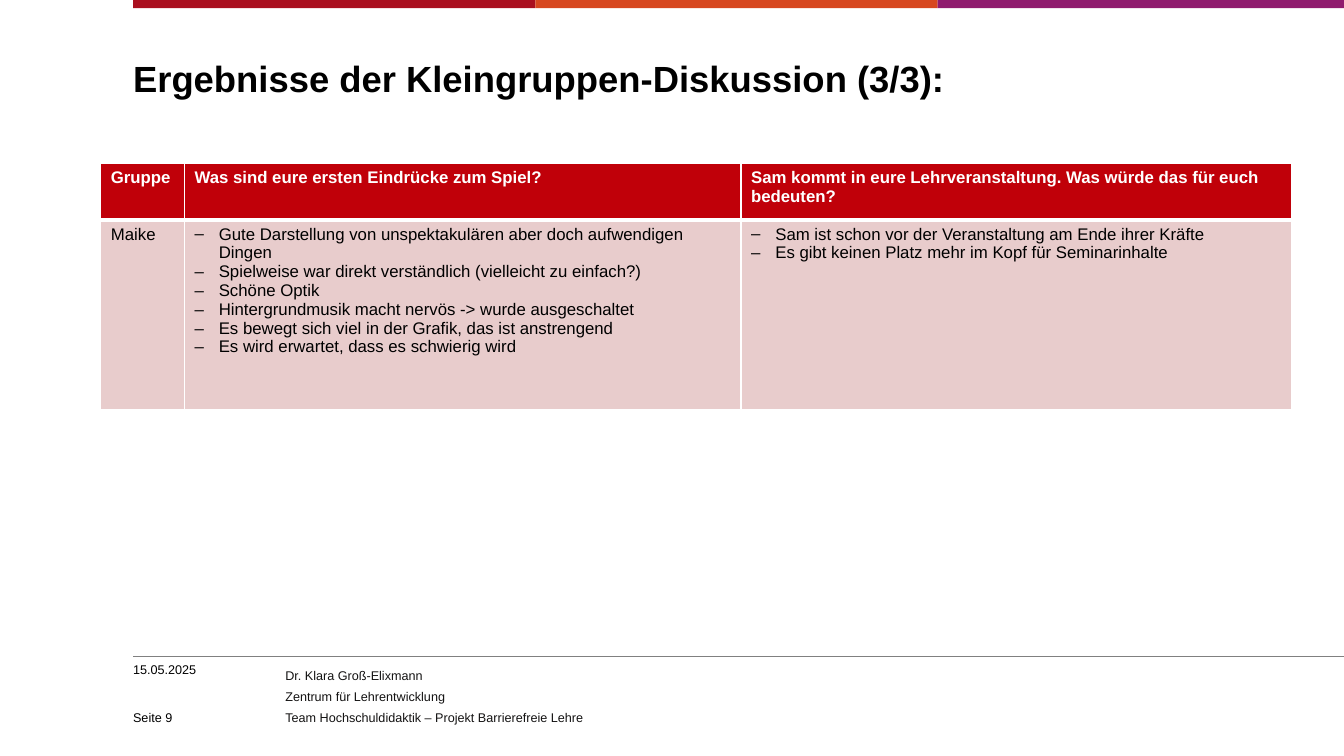
"""Build the slide with the results of the small-group discussion."""
from lxml.etree import SubElement
from pptx import Presentation
from pptx.dml.color import RGBColor
from pptx.enum.shapes import MSO_CONNECTOR, MSO_SHAPE
from pptx.enum.text import MSO_ANCHOR, PP_ALIGN
from pptx.oxml import parse_xml
from pptx.oxml.ns import nsdecls, qn
from pptx.util import Inches, Pt

FONT = "Arial"
BLACK = RGBColor(0x00, 0x00, 0x00)
WHITE = RGBColor(0xFF, 0xFF, 0xFF)
INK = RGBColor(0x14, 0x13, 0x13)
GREY = RGBColor(0x80, 0x80, 0x80)
HEADER_RED = RGBColor(0xC0, 0x00, 0x09)
PALE_RED = RGBColor(0xE8, 0xCC, 0xCC)
BAND_COLOURS = [
    RGBColor(0xAA, 0x0F, 0x1F),
    RGBColor(0xD7, 0x47, 0x1F),
    RGBColor(0x90, 0x1B, 0x6E),
]

TITLE = "Ergebnisse der Kleingruppen-Diskussion (3/3):"
QUESTIONS = [
    "Gruppe",
    "Was sind eure ersten Eindrücke zum Spiel?",
    "Sam kommt in eure Lehrveranstaltung. Was würde das für euch bedeuten?",
]
GROUP = "Maike"
IMPRESSIONS = [
    "Gute Darstellung von unspektakulären aber doch aufwendigen Dingen",
    "Spielweise war direkt verständlich (vielleicht zu einfach?)",
    "Schöne Optik",
    "Hintergrundmusik macht nervös -> wurde ausgeschaltet",
    "Es bewegt sich viel in der Grafik, das ist anstrengend",
    "Es wird erwartet, dass es schwierig wird",
]
CONSEQUENCES = [
    "Sam ist schon vor der Veranstaltung am Ende ihrer Kräfte",
    "Es gibt keinen Platz mehr im Kopf für Seminarinhalte",
]
AUTHOR = [
    "Dr. Klara Groß-Elixmann",
    "Zentrum für Lehrentwicklung",
    "Team Hochschuldidaktik – Projekt Barrierefreie Lehre",
]
DATE = "15.05.2025"
PAGE = "Seite 9"

SLIDE_WIDTH = 13.33
MARGIN = 1.32
BAND_WIDTH = 3.99
COLUMN_WIDTHS = [0.83, 5.52, 5.46]
ROW_HEIGHTS = [0.56, 1.88]


def style_font(font, size, colour, bold=False):
    font.name = FONT
    font.size = Pt(size)
    font.bold = bold
    font.color.rgb = colour


def clear_insets(frame):
    frame.margin_left = frame.margin_top = frame.margin_right = frame.margin_bottom = 0


def add_footer(slide, text, box, colour, wrap, anchor=MSO_ANCHOR.TOP, spacing=None):
    frame = slide.shapes.add_textbox(*map(Inches, box)).text_frame
    clear_insets(frame)
    frame.word_wrap = wrap
    frame.vertical_anchor = anchor
    frame.text = text
    paragraph = frame.paragraphs[0]
    paragraph.line_spacing = spacing
    style_font(paragraph.font, 9, colour)


def add_dash(paragraph):
    properties = paragraph._p.get_or_add_pPr()
    properties.set("marL", str(Inches(0.24)))
    properties.set("indent", str(Inches(-0.24)))
    SubElement(properties, qn("a:buFont")).set("typeface", FONT)
    SubElement(properties, qn("a:buChar")).set("char", "–")


def set_borders(cell, widths):
    for position, (side, width) in enumerate(zip("LRTB", widths)):
        cell._tc.get_or_add_tcPr().insert(position, parse_xml(
            f'<a:ln{side} {nsdecls("a")} w="{Pt(width)}"><a:solidFill>'
            f'<a:srgbClr val="{WHITE}"/></a:solidFill></a:ln{side}>'))


def fill_cell(cell, lines, fill, colour, bold, dashed, borders):
    cell.fill.solid()
    cell.fill.fore_color.rgb = fill
    set_borders(cell, borders)
    cell.text = "\n".join(lines)
    for paragraph in cell.text_frame.paragraphs:
        if dashed:
            add_dash(paragraph)
        style_font(paragraph.font, 12, colour, bold)


def add_bands(slide):
    for index, colour in enumerate(BAND_COLOURS):
        left = MARGIN + index * BAND_WIDTH
        width = min(BAND_WIDTH, SLIDE_WIDTH - left) if index < 2 else SLIDE_WIDTH - left
        band = slide.shapes.add_shape(
            MSO_SHAPE.RECTANGLE, Inches(left), 0, Inches(width), Inches(0.08))
        band.shadow.inherit = False
        band.fill.solid()
        band.fill.fore_color.rgb = colour
        band.line.fill.background()


def add_rule(slide):
    rule = slide.shapes.add_connector(
        MSO_CONNECTOR.STRAIGHT, Inches(MARGIN), Inches(6.51), Inches(SLIDE_WIDTH), Inches(6.51))
    rule.line.color.rgb = GREY
    rule.line.width = Pt(0.5)
    SubElement(rule._element.spPr, qn("a:effectLst"))


def add_title(slide):
    title = slide.shapes.title
    title.left, title.top, title.width, title.height = map(Inches, (MARGIN, 0.57, 11.81, 0.98))
    frame = title.text_frame
    clear_insets(frame)
    frame.vertical_anchor = MSO_ANCHOR.TOP
    frame.text = TITLE
    heading = frame.paragraphs[0]
    heading.alignment = PP_ALIGN.LEFT
    heading.line_spacing = Pt(30)
    style_font(heading.font, 26, BLACK, True)


def add_results(slide):
    table = slide.shapes.add_table(
        2, 3, Inches(1), Inches(1.62),
        Inches(sum(COLUMN_WIDTHS)), Inches(sum(ROW_HEIGHTS))).table
    for column, width in zip(table.columns, COLUMN_WIDTHS):
        column.width = Inches(width)
    for row, height in zip(table.rows, ROW_HEIGHTS):
        row.height = Inches(height)
    for index, question in enumerate(QUESTIONS):
        fill_cell(table.cell(0, index), [question], HEADER_RED, WHITE, True, False, (1, 1, 1, 3))
    for index, answers in enumerate([[GROUP], IMPRESSIONS, CONSEQUENCES]):
        fill_cell(table.cell(1, index), answers, PALE_RED, BLACK, False, index > 0, (1, 1, 3, 1))


def main():
    deck = Presentation()
    deck.slide_width, deck.slide_height = Inches(SLIDE_WIDTH), Inches(7.5)
    slide = deck.slides.add_slide(deck.slide_layouts[5])
    add_footer(slide, "\v".join(AUTHOR), (2.83, 6.57, 5.75, 0.6), INK, False, spacing=Pt(15))
    add_bands(slide)
    add_rule(slide)
    add_title(slide)
    add_results(slide)
    add_footer(slide, DATE, (MARGIN, 6.57, 1.42, 0.2), BLACK, False)
    add_footer(slide, PAGE, (MARGIN, 6.96, 1.42, 0.23), BLACK, True, MSO_ANCHOR.BOTTOM)
    deck.save("out.pptx")


if __name__ == "__main__":
    main()
